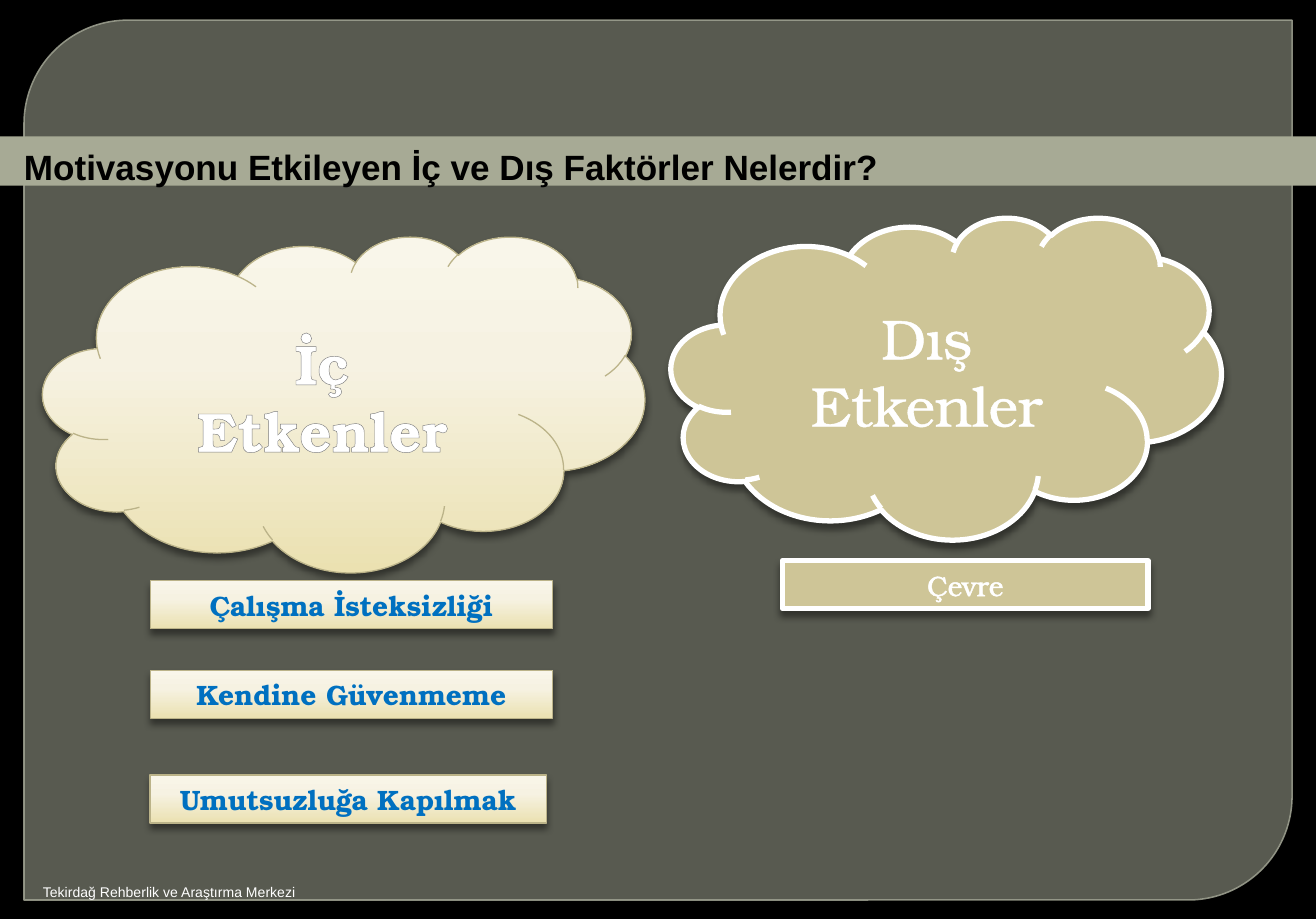
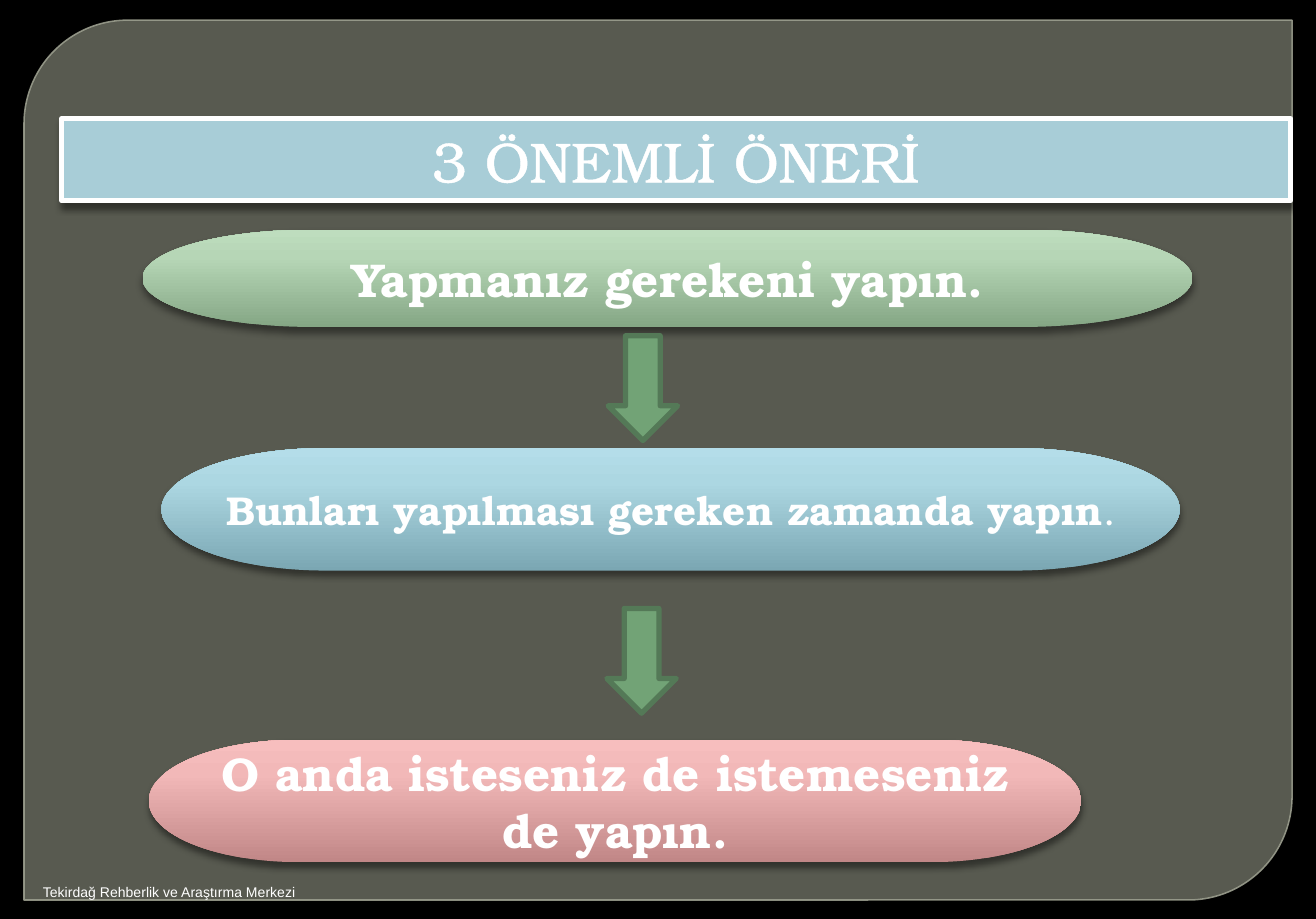
from dataclasses import dataclass, field, replace
from typing import Optional

import lxml.etree
import pptx
import pptx.dml.color
import pptx.enum.shapes
import pptx.enum.text
import pptx.oxml.ns
import pptx.shapes.autoshape
import pptx.slide
import pptx.text.text
import pptx.util

EMU_PER_PX = 9144  # 100 px to the inch
SLIDE_WIDTH, SLIDE_HEIGHT = 1043, 728

Preset = pptx.enum.shapes.MSO_SHAPE
Align = pptx.enum.text.PP_ALIGN
Anchor = pptx.enum.text.MSO_ANCHOR
Shape = pptx.shapes.autoshape.Shape
qn = pptx.oxml.ns.qn


@dataclass(frozen=True)
class Gradient:
    stops: tuple[tuple[int, str], ...]  # percent, colour
    angle: int


@dataclass(frozen=True)
class Outline:
    color: str
    points: float


@dataclass(frozen=True)
class Look:
    """Surface of a shape."""
    fill: str | Gradient
    line: Optional[Outline] = None
    shadow: bool = True


@dataclass(frozen=True)
class TextStyle:
    size: int
    color: str | Gradient
    font: str = "TeX Gyre Bonum"
    bold: bool = False
    outline: Optional[Outline] = None


def rising(bottom: str, middle: str, top: str, middle_stop: int = 72) -> Gradient:
    """Gradient that runs from the bottom edge to the top edge."""
    return Gradient(((0, bottom), (middle_stop, middle), (100, top)), 270)


@dataclass(frozen=True)
class Theme:
    background: str = "000000"
    panel: str = "888B7B"
    panel_line: Outline = Outline("9DA090", 0.87)
    panel_opacity: int = 65
    panel_line_opacity: int = 88

    # Surfaces
    cream: Look = Look(rising("EBE1B1", "F6F2E2", "F9F6EA", 62), Outline("BBB389", 0.75))
    khaki: Look = Look("CEC597", Outline("FFFFFF", 3))
    sky: Look = Look("A8CDD7", Outline("FFFFFF", 3))
    band: Look = Look("A7AA95", shadow=False)
    arrow: Look = Look("72A376", Outline("547957", 3), shadow=False)
    green: Look = Look(rising("85A785", "B6D6B6", "BEDDBE"))
    blue: Look = Look(rising("7BA7B3", "ACD7E2", "B4DDE9"))
    pink: Look = Look(rising("C18787", "F2B8B8", "F7BEBE"))

    # Type
    footer: TextStyle = TextStyle(8, "FFFFFF", "Arial")
    band_title: TextStyle = TextStyle(20, "000000", "Arial", bold=True)
    heading: TextStyle = TextStyle(32, "FFFFFF", outline=Outline("FFFFFF", 1.45))
    steel_heading: TextStyle = TextStyle(
        32,
        Gradient(((0, "FFFFFF"), (9, "FFFFFF"), (50, "7F7F7F"), (79, "FFFFFF"), (100, "FFFFFF")), 90),
        bold=True, outline=Outline("7D7D7D", 0.83))
    factor: TextStyle = TextStyle(16, "0070C0", bold=True)
    outer_factor: TextStyle = TextStyle(16, "FFFFFF", outline=Outline("FFFFFF", 1.45))
    advice: TextStyle = TextStyle(27, "FFFFFF", bold=True)
    long_advice: TextStyle = TextStyle(23, "FFFFFF", bold=True)
    advice_stop: TextStyle = TextStyle(16, "FFFFFF", bold=True)


THEME = Theme()


@dataclass(frozen=True)
class Box:
    left: int
    top: int
    width: int
    height: int

    def emu(self) -> list[pptx.util.Emu]:
        return [pptx.util.Emu(value * EMU_PER_PX)
                for value in (self.left, self.top, self.width, self.height)]


@dataclass(frozen=True)
class Block:
    """A preset shape with its text."""
    preset: Preset
    box: Box
    look: Look
    lines: tuple[str, ...] = ()
    style: TextStyle = field(default=THEME.factor)
    anchor: Anchor = Anchor.TOP
    align: Align = Align.CENTER
    insets: tuple[int, int, int, int] = (11, 6, 11, 6)
    ending: str = ""  # last characters, in the smaller advice style


# Formatting helpers

def rgb(color: str) -> pptx.dml.color.RGBColor:
    return pptx.dml.color.RGBColor.from_string(color)


def add_node(parent, tag: str, **attributes):
    node = lxml.etree.SubElement(parent, qn(tag))
    for name, value in attributes.items():
        node.set(name, str(value))
    return node


def add_color(parent, color: str, opacity: int = 100) -> None:
    node = add_node(parent, "a:srgbClr", val=color)
    if opacity < 100:
        add_node(node, "a:alpha", val=opacity * 1000)


def set_fill(fill, properties, paint: str | Gradient) -> None:
    """Fill with a colour or a gradient; properties is the XML that holds the fill."""
    if isinstance(paint, str):
        fill.solid()
        fill.fore_color.rgb = rgb(paint)
        return
    fill.gradient()
    gradient = properties.find(qn("a:gradFill"))
    for child in list(gradient):
        gradient.remove(child)
    stops = add_node(gradient, "a:gsLst")
    for percent, color in paint.stops:
        add_color(add_node(stops, "a:gs", pos=percent * 1000), color)
    add_node(gradient, "a:lin", ang=paint.angle * 60000, scaled=0)


def set_opacity(color_parent, opacity: int) -> None:
    add_node(color_parent.find(qn("a:solidFill")).find(qn("a:srgbClr")),
             "a:alpha", val=opacity * 1000)


def add_run(paragraph, text: str, *, style: TextStyle) -> None:
    run = paragraph.add_run()
    run.text = text
    run.font.size = pptx.util.Pt(style.size)
    run.font.bold = style.bold
    run.font.name = style.font
    properties = run._r.get_or_add_rPr()
    set_fill(run.font.fill, properties, style.color)
    if style.outline:
        line = add_node(properties, "a:ln", w=int(pptx.util.Pt(style.outline.points)))
        add_color(add_node(line, "a:solidFill"), style.outline.color)
        properties.insert(0, line)


def write_text(shape, lines: tuple[str, ...], *, style: TextStyle,
               anchor: Anchor = Anchor.TOP, align: Align = Align.LEFT,
               insets: tuple[int, int, int, int] = (0, 0, 0, 0), ending: str = "") -> None:
    frame = shape.text_frame
    frame.word_wrap = True
    frame.vertical_anchor = anchor
    frame.margin_left, frame.margin_top, frame.margin_right, frame.margin_bottom = (
        pptx.util.Emu(inset * EMU_PER_PX) for inset in insets)
    for index, line in enumerate(lines):
        paragraph = frame.add_paragraph() if index else frame.paragraphs[0]
        paragraph.alignment = align
        add_run(paragraph, line, style=style)
    if ending:
        add_run(paragraph, ending, style=THEME.advice_stop)


def add_preset(slide: pptx.slide.Slide, preset: Preset, box: Box, look: Look) -> Shape:
    shape = slide.shapes.add_shape(preset, *box.emu())
    properties = shape.element.spPr
    set_fill(shape.fill, properties, look.fill)
    if look.line:
        shape.line.color.rgb = rgb(look.line.color)
        shape.line.width = pptx.util.Pt(look.line.points)
    else:
        shape.line.fill.background()
    shape.shadow.inherit = False
    if look.shadow:
        shadow = add_node(properties.find(qn("a:effectLst")), "a:outerShdw",
                          blurRad=int(pptx.util.Pt(4)), dist=int(pptx.util.Pt(3)),
                          dir=90 * 60000, rotWithShape=0)
        add_color(shadow, "000000", 43)
    return shape


def draw_block(slide: pptx.slide.Slide, block: Block) -> None:
    shape = add_preset(slide, block.preset, block.box, block.look)
    if block.lines:
        write_text(shape, block.lines, style=block.style, anchor=block.anchor,
                   align=block.align, insets=block.insets, ending=block.ending)


def add_base_slide(presentation) -> pptx.slide.Slide:
    """Blank slide with the shared background, panel and footer."""
    slide = presentation.slides.add_slide(presentation.slide_layouts[6])
    slide.background.fill.solid()
    slide.background.fill.fore_color.rgb = rgb(THEME.background)

    panel = add_preset(slide, Preset.ROUND_2_DIAG_RECTANGLE, Box(19, 16, 1005, 697),
                       Look(THEME.panel, THEME.panel_line, shadow=False))
    panel.adjustments[0], panel.adjustments[1] = 0.118, 0
    properties = panel.element.spPr
    set_opacity(properties, THEME.panel_opacity)
    set_opacity(properties.find(qn("a:ln")), THEME.panel_line_opacity)

    footer = slide.shapes.add_textbox(*Box(34, 700, 394, 24).emu())
    write_text(footer, ("Tekirdağ Rehberlik ve Araştırma Merkezi",), style=THEME.footer)
    return slide


# Slide contents

def factor_blocks() -> list[Block]:
    inner_cloud = Block(Preset.CLOUD, Box(34, 187, 477, 266), THEME.cream,
                        ("İç", "Etkenler"), THEME.steel_heading, Anchor.MIDDLE)
    outer_cloud = replace(inner_cloud, box=Box(532, 172, 436, 255),
                          look=THEME.khaki, lines=("Dış", "Etkenler"), style=THEME.heading)
    inner_factors = [
        Block(Preset.RECTANGLE, Box(119, top, width, 38), THEME.cream, (label,))
        for label, top, width in (("Çalışma İsteksizliği", 460, 319),
                                  ("Kendine Güvenmeme", 531, 319),
                                  ("Umutsuzluğa Kapılmak", 614, 314))]
    outer_factor = Block(Preset.RECTANGLE, Box(620, 444, 290, 38), THEME.khaki,
                         ("Çevre",), THEME.outer_factor)
    title_band = Block(Preset.RECTANGLE, Box(0, 108, SLIDE_WIDTH, 39), THEME.band,
                       ("Motivasyonu Etkileyen İç ve Dış Faktörler Nelerdir?",),
                       THEME.band_title, align=Align.LEFT, insets=(19, 7, 10, 0))
    return [inner_cloud, outer_cloud, *inner_factors, outer_factor, title_band]


def advice_blocks() -> list[Block]:
    title = Block(Preset.RECTANGLE, Box(49, 94, 974, 65), THEME.sky,
                  ("3 ÖNEMLİ ÖNERİ",), THEME.heading)
    first = Block(Preset.FLOWCHART_TERMINATOR, Box(113, 182, 832, 77), THEME.green,
                  ("Yapmanız gerekeni yapın.",), THEME.advice, Anchor.MIDDLE)
    second = replace(first, box=Box(128, 355, 807, 97), look=THEME.blue,
                     lines=("Bunları yapılması gereken zamanda yapın",),
                     style=THEME.long_advice, ending=".")
    third = replace(first, box=Box(118, 586, 739, 97), look=THEME.pink,
                    lines=("O anda isteseniz de istemeseniz de yapın.",))
    arrows = [Block(Preset.DOWN_ARROW, Box(left, top, 55, 83), THEME.arrow)
              for left, top in ((482, 266), (481, 482))]
    return [title, first, second, third, *arrows]


def main() -> None:
    presentation = pptx.Presentation()
    presentation.slide_width = pptx.util.Emu(SLIDE_WIDTH * EMU_PER_PX)
    presentation.slide_height = pptx.util.Emu(SLIDE_HEIGHT * EMU_PER_PX)
    for blocks in (factor_blocks(), advice_blocks()):
        slide = add_base_slide(presentation)
        for block in blocks:
            draw_block(slide, block)
    presentation.save("out.pptx")


if __name__ == "__main__":
    main()
